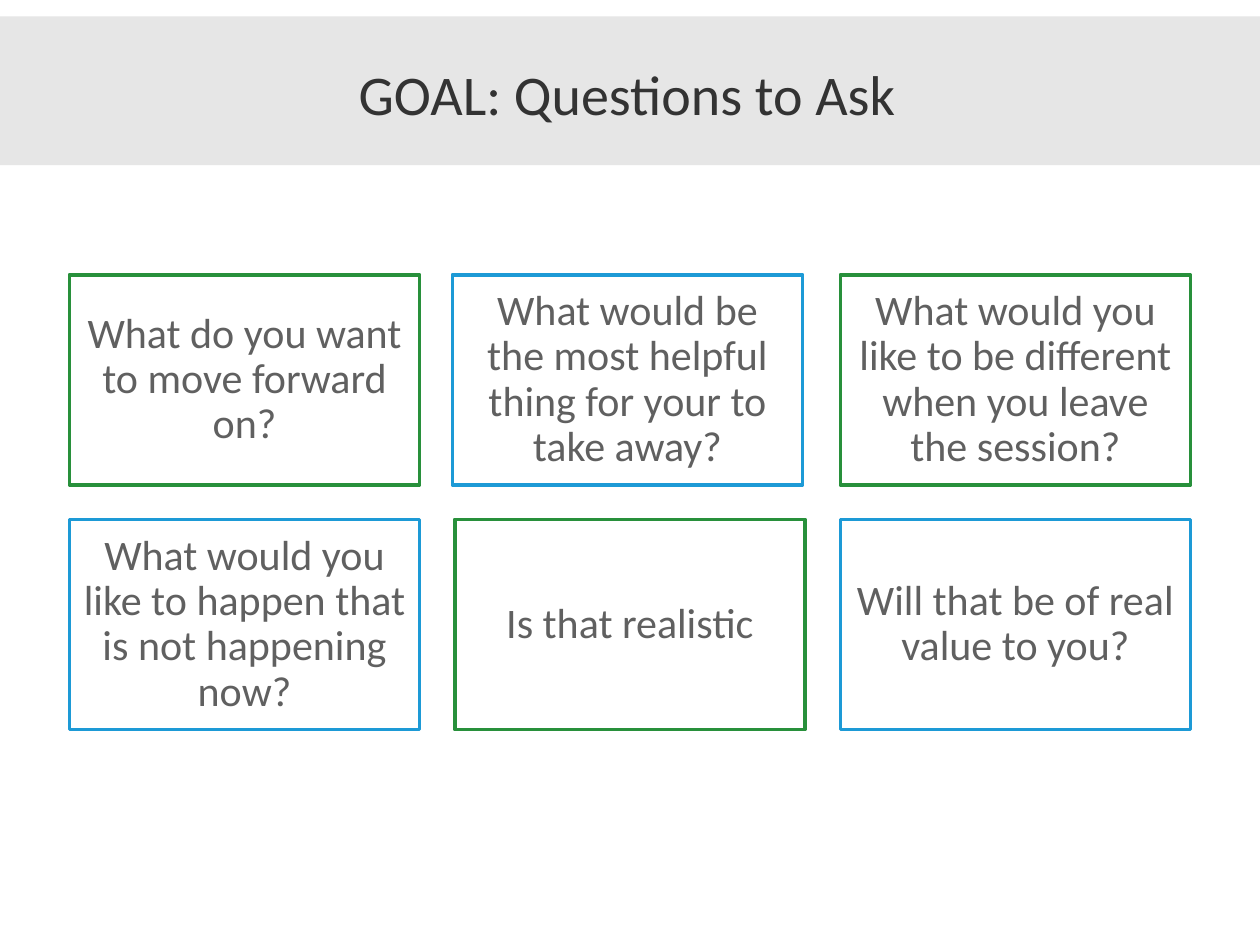
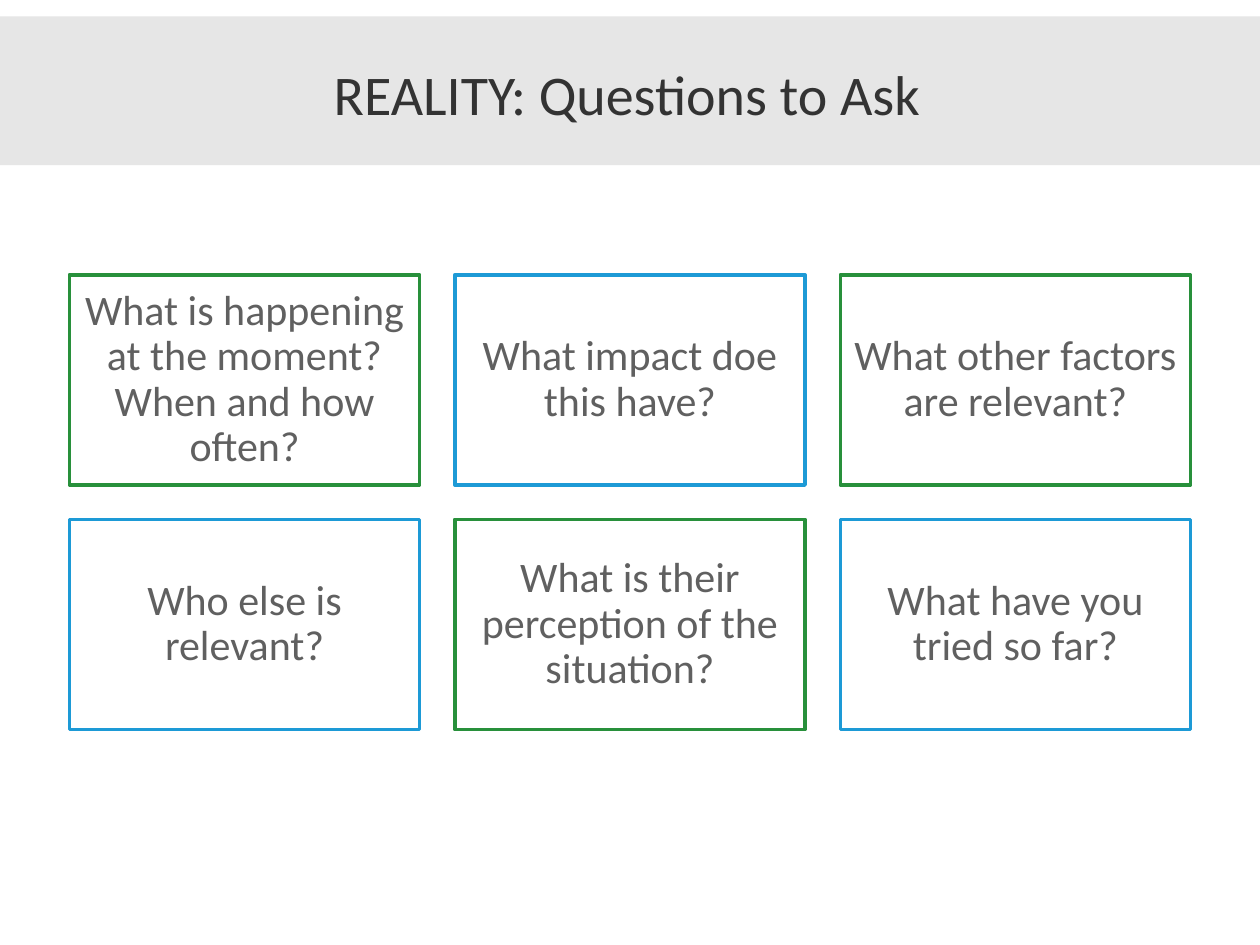
"""Build two slides of coaching questions, each a title band over a grid of boxes."""
from pptx import Presentation, util as u
from pptx.dml.color import RGBColor
from pptx.enum import shapes, text

COLORS = {"band": "E6E6E6", "title": "333333", "body": "606060",
          "green": "28903B", "blue": "1D9AD6"}
COLUMNS = 3
LEFT, TOP, WIDTH, HEIGHT = 1.4, 5.54, 7.06, 4.24
STEP_X, STEP_Y = 7.77, 4.93

SLIDES = [
    ("GOAL: Questions to Ask", [
        "What do you want to move forward on?",
        "What would be the most helpful thing for your to take away?",
        "What would you like to be different when you leave the session?",
        "What would you like to happen that is not happening now?",
        "Is that realistic",
        "Will that be of real value to you?"], {1: -0.05}),
    ("REALITY: Questions to Ask", [
        "What is happening at the moment? When and how often?",
        "What impact doe this have?",
        "What other factors are relevant?",
        "Who else is relevant?",
        "What is their perception of the situation?",
        "What have you tried so far?"], {}),
]


class Deck:
    def __init__(self):
        self.prs = Presentation()
        self.prs.slide_width, self.prs.slide_height = u.Cm(25.4), u.Cm(19.05)
        self.s = None

    def color(self, name):
        return RGBColor.from_string(COLORS[name])

    def add_slide(self):
        self.s = self.prs.slides.add_slide(self.prs.slide_layouts[6])

    def rect(self, *box, fill=None, line=None):
        sp = self.s.shapes.add_shape(shapes.MSO_SHAPE.RECTANGLE, *map(u.Cm, box))
        sp.shadow.inherit = False
        if fill:
            sp.fill.solid()
            sp.fill.fore_color.rgb = self.color(fill)
        else:
            sp.fill.background()
        if line:
            sp.line.color.rgb = self.color(line)
            sp.line.width = u.Pt(2)
        else:
            sp.line.fill.background()
        return sp

    def put_text(self, sp, words, size, color, spacing=1.0, inset=0.25):
        tf = sp.text_frame
        margins = {f"margin_{side}": u.Cm(inset)
                   for side in ("left", "top", "right", "bottom")}
        frame = {"word_wrap": True,
                 "vertical_anchor": text.MSO_ANCHOR.MIDDLE, **margins}
        p = tf.paragraphs[0]
        r = p.add_run()
        r.text = words
        formats = [
            (tf, frame),
            (p, {"alignment": text.PP_ALIGN.CENTER, "line_spacing": spacing}),
            (r.font, {"name": "Calibri", "size": u.Pt(size)}),
            (r.font.color, {"rgb": self.color(color)}),
        ]
        for target, values in formats:
            for name, value in values.items():
                setattr(target, name, value)

    def title(self, words):
        self.rect(0, 0.33, 25.4, 3, fill="band")
        sp = self.s.shapes.add_textbox(*map(u.Cm, (1.7, 0.41, 21.89, 2.92)))
        self.put_text(sp, words, 32, "title")

    def question(self, index, words, nudge=0):
        row, col = divmod(index, COLUMNS)
        sp = self.rect(LEFT + col * STEP_X + nudge, TOP + row * STEP_Y,
                       WIDTH, HEIGHT, line=("green", "blue")[index % 2])
        self.put_text(sp, words, 24, "body", spacing=0.9)


def main():
    deck = Deck()
    for title, questions, nudges in SLIDES:
        deck.add_slide()
        deck.title(title)
        for i, words in enumerate(questions):
            deck.question(i, words, nudges.get(i, 0))
    deck.prs.save("out.pptx")


if __name__ == "__main__":
    main()
